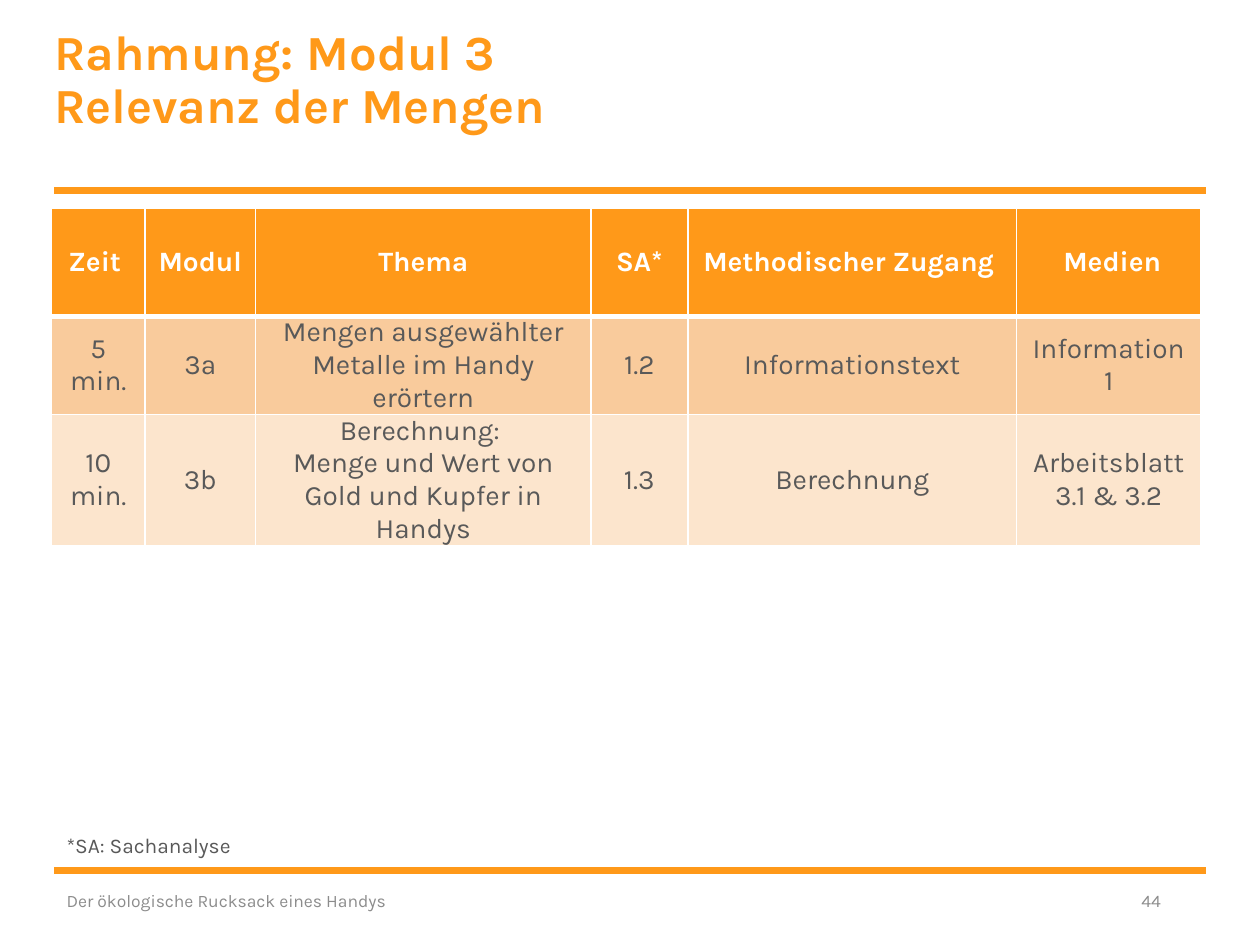
"""Build the module 3 overview slide with its schedule table."""
from dataclasses import dataclass

from lxml import etree
from pptx import Presentation
from pptx.dml.color import RGBColor
from pptx.enum import shapes, text
from pptx.oxml import ns
from pptx.util import Inches, Pt


@dataclass(frozen=True)
class Theme:
    font: str = "Karla"
    accent: str = "FF9919"
    body: str = "595959"
    muted: str = "8C8C8C"
    white: str = "FFFFFF"
    row_dark: str = "F9CB9C"
    row_light: str = "FCE5CD"
    title_size: int = 28
    table_size: int = 16
    note_size: int = 12
    footer_size: int = 10


@dataclass(frozen=True)
class Style:
    size: int
    color: str
    bold: bool = False


@dataclass(frozen=True)
class Label:
    content: str
    left: float
    top: float
    width: float
    height: float
    style: Style
    align: text.PP_ALIGN = text.PP_ALIGN.LEFT
    anchor: text.MSO_ANCHOR = text.MSO_ANCHOR.MIDDLE


@dataclass(frozen=True)
class Row:
    height: float
    fill: str
    style: Style
    entries: tuple
    spacing: int = 0
    bottom_border: int = 1


THEME = Theme()
HEADING = Style(THEME.title_size, THEME.accent, True)
HEADER = Style(THEME.table_size, THEME.white, True)
BODY = Style(THEME.table_size, THEME.body)
FOOTER = Style(THEME.footer_size, THEME.muted)
NOTE = Style(THEME.note_size, THEME.body)

MARGIN, RULE_END = 0.43, 9.57
RULE_TOPS = (1.51, 6.91)
TITLE_LINES = ("Rahmung: Modul 3", "Relevanz der Mengen")
LABELS = (
    Label("Der ökologische Rucksack eines Handys", MARGIN, 6.95, 3.38, 0.4, FOOTER),
    Label("44", 7.52, 6.95, 1.79, 0.4, FOOTER, text.PP_ALIGN.RIGHT),
    Label("*SA: Sachanalyse", MARGIN, 6.56, 2.75, 0.3, NOTE, anchor=text.MSO_ANCHOR.TOP),
)
COLUMN_WIDTHS = (0.74, 0.88, 2.66, 0.77, 2.61, 1.46)
ROWS = (
    Row(0.86, THEME.accent, HEADER,
        ("Zeit ", "Modul", "Thema", "SA*", "Methodischer Zugang ", " Medien"), 3, 3),
    Row(0.68, THEME.row_dark, BODY,
        ("5 min.", "3a", "Mengen ausgewählter Metalle im Handy erörtern", "1.2",
         "Informationstext", "Information 1")),
    Row(0.86, THEME.row_light, BODY,
        ("10 min.", "3b", "Berechnung: \nMenge und Wert von Gold und Kupfer in Handys",
         "1.3", "Berechnung", "Arbeitsblatt 3.1 & 3.2")),
)


def add_span(para, content: str, style: Style) -> None:
    """Append one formatted run to a paragraph."""
    span = para.add_run()
    span.text = content
    span.font.name = THEME.font
    span.font.size = Pt(style.size)
    span.font.bold = style.bold
    span.font.color.rgb = RGBColor.from_string(style.color)


def add_title(page) -> None:
    """Place the title placeholder and fill its two lines."""
    box = page.shapes.title
    box.left, box.top = Inches(MARGIN), Inches(0.22)
    box.width, box.height = Inches(6.69), Inches(1.17)
    frame = box.text_frame
    frame.margin_left = frame.margin_right = frame.margin_top = frame.margin_bottom = 0
    frame.vertical_anchor = text.MSO_ANCHOR.TOP
    frame.auto_size = text.MSO_AUTO_SIZE.NONE
    para = frame.paragraphs[0]
    para.alignment = text.PP_ALIGN.LEFT
    para.line_spacing = 0.9
    for index, line in enumerate(TITLE_LINES):
        if index:
            para.add_line_break()
        add_span(para, line, HEADING)


def add_rule(page, top: float) -> None:
    """Draw a horizontal accent rule across the page."""
    rule = page.shapes.add_connector(
        shapes.MSO_CONNECTOR.STRAIGHT,
        Inches(MARGIN), Inches(top), Inches(RULE_END), Inches(top))
    rule.line.color.rgb = RGBColor.from_string(THEME.accent)
    rule.line.width = Pt(4)
    etree.SubElement(rule._element.spPr, ns.qn("a:effectLst"))


def add_label(page, label: Label) -> None:
    """Add a single-line text box."""
    box = page.shapes.add_textbox(Inches(label.left), Inches(label.top),
                                  Inches(label.width), Inches(label.height))
    frame = box.text_frame
    frame.word_wrap = True
    frame.vertical_anchor = label.anchor
    para = frame.paragraphs[0]
    para.alignment = label.align
    add_span(para, label.content, label.style)


def add_borders(cell, bottom: int) -> None:
    """Give a cell white borders with its own bottom weight."""
    properties = cell._tc.get_or_add_tcPr()
    for side, weight in (("L", 1), ("R", 1), ("T", 1), ("B", bottom)):
        border = etree.SubElement(properties, ns.qn(f"a:ln{side}"), w=str(Pt(weight)))
        fill = etree.SubElement(border, ns.qn("a:solidFill"))
        etree.SubElement(fill, ns.qn("a:srgbClr"), val=THEME.white)


def fill_cell(cell, content: str, row: Row) -> None:
    """Format one table cell and write its paragraphs."""
    add_borders(cell, row.bottom_border)
    cell.fill.solid()
    cell.fill.fore_color.rgb = RGBColor.from_string(row.fill)
    cell.vertical_anchor = text.MSO_ANCHOR.MIDDLE
    cell.margin_left = cell.margin_right = Inches(0.07)
    cell.margin_top = cell.margin_bottom = 0
    frame = cell.text_frame
    for index, line in enumerate(content.split("\n")):
        para = frame.add_paragraph() if index else frame.paragraphs[0]
        para.alignment = text.PP_ALIGN.CENTER
        para.space_after = Pt(row.spacing)
        add_span(para, line, row.style)


def add_schedule(page) -> None:
    """Add the schedule table."""
    table = page.shapes.add_table(
        len(ROWS), len(COLUMN_WIDTHS), Inches(0.41), Inches(1.65),
        Inches(sum(COLUMN_WIDTHS)), Inches(sum(row.height for row in ROWS))).table
    table.horz_banding = False
    for column, width in zip(table.columns, COLUMN_WIDTHS):
        column.width = Inches(width)
    for line, row in zip(table.rows, ROWS):
        line.height = Inches(row.height)
        for cell, content in zip(line.cells, row.entries):
            fill_cell(cell, content, row)


def main() -> None:
    """Assemble and save the deck."""
    deck = Presentation()
    deck.slide_width, deck.slide_height = Inches(10), Inches(7.5)
    page = deck.slides.add_slide(deck.slide_layouts[5])
    for top in RULE_TOPS:
        add_rule(page, top)
    add_title(page)
    add_schedule(page)
    for label in LABELS:
        add_label(page, label)
    deck.save("out.pptx")


if __name__ == "__main__":
    main()
